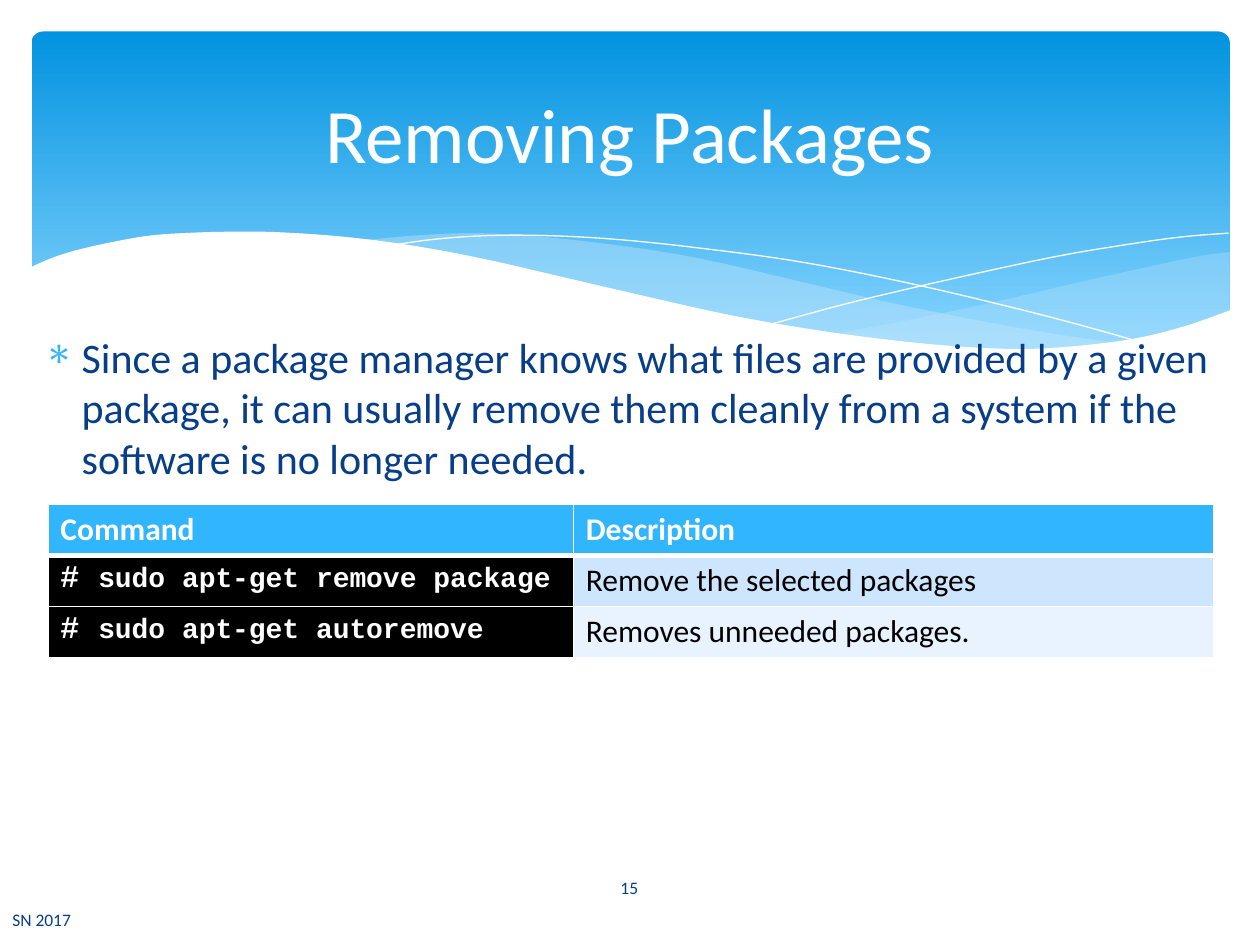
from lxml import etree
from pptx import Presentation
from pptx.dml.color import RGBColor
from pptx.enum.shapes import MSO_SHAPE
from pptx.enum.text import MSO_ANCHOR, PP_ALIGN
from pptx.oxml.ns import qn
from pptx.util import Inches, Pt

ROUNDED = MSO_SHAPE.ROUNDED_RECTANGLE
TOP, MIDDLE = MSO_ANCHOR.TOP, MSO_ANCHOR.MIDDLE
LEFT, CENTER = PP_ALIGN.LEFT, PP_ALIGN.CENTER

WHITE, BLACK, NAVY, SKY, MIST = "FFFFFF", "000000", "073E87", "31B6FD", "C6E7FC"
SANS, MONO = "Calibri", "Courier New"

RIGHT_SWELL = (
    [(9.51, 1.75), (9.23, 1.79), (8.81, 1.88), (8.36, 1.98), (7.54, 2.17), (6.81, 2.32), (6.36, 2.4)],
    [(6.36, 2.4), (6.94, 2.47), (7.56, 2.52), (8.1, 2.52), (8.56, 2.48), (8.96, 2.4), (9.24, 2.32), (9.51, 2.22)],
)
MIDDLE_SWELL = (
    [(8.68, 2.48), (8.12, 2.4), (7.5, 2.29), (6.81, 2.15), (6.04, 1.97), (5.44, 1.83), (4.89, 1.73),
     (4.17, 1.64), (3.55, 1.6), (3.03, 1.62), (2.61, 1.66)],
    [(2.61, 1.66), (3.17, 1.74), (3.79, 1.86), (4.24, 1.97), (5.05, 2.15), (5.76, 2.3), (6.4, 2.41),
     (6.97, 2.49), (7.48, 2.52), (7.93, 2.53), (8.32, 2.52), (8.68, 2.48)],
)
FALLING_LINE = [(2.84, 1.7), (3.19, 1.65), (3.62, 1.62), (4.08, 1.62), (4.64, 1.65), (5.31, 1.72),
                (6.11, 1.83), (7.02, 2.01), (8.06, 2.26), (8.82, 2.47)]
RISING_LINE = [(5.88, 2.32), (6.47, 2.16), (7.23, 1.98), (8.11, 1.79), (8.7, 1.69), (9.13, 1.63), (9.5, 1.6)]
WHITE_WAVE = [(9.52, 2.21), (9.15, 2.34), (8.74, 2.44), (8.25, 2.5), (7.84, 2.52), (7.36, 2.5), (6.83, 2.45),
              (6.23, 2.37), (5.54, 2.25), (4.78, 2.08), (4.22, 1.95), (3.66, 1.82), (3.15, 1.72), (2.67, 1.65),
              (2.25, 1.61), (1.86, 1.59), (1.52, 1.59), (1.21, 1.6), (0.94, 1.62), (0.7, 1.66), (0.42, 1.72),
              (0.21, 1.78), (0.04, 1.85), (-0.02, 1.88)]


def color(hex_text):
    """Return the colour for a hex string."""
    return RGBColor.from_string(hex_text)


def smooth_curve(points, steps=5):
    """Return points along a Catmull-Rom curve through the given points."""
    padded = [points[0], *points, points[-1]]
    curve = []
    for a, b, c, d in zip(padded, padded[1:], padded[2:], padded[3:]):
        for step in range(steps):
            t = step / steps
            curve.append(tuple(
                (2 * q + (r - p) * t + (2 * p - 5 * q + 4 * r - s) * t ** 2
                 + (3 * q - p - 3 * r + s) * t ** 3) / 2
                for p, q, r, s in zip(a, b, c, d)))
    return curve + [points[-1]]


def add_outline(page, box, points, fill=None, opacity=100, line=None):
    """Draw a freeform from points relative to the box."""
    emu = [(Inches(x), Inches(y)) for x, y in points]
    builder = page.shapes.build_freeform(*emu[0], scale=1.0)
    builder.add_line_segments(emu[1:], close=fill is not None)
    shape = builder.convert_to_shape(Inches(box[0]), Inches(box[1]))
    shape.shadow.inherit = False
    if fill:
        shape.fill.solid()
        shape.fill.fore_color.rgb = color(fill)
        tint = shape.fill._xPr.find(".//" + qn("a:srgbClr"))
        etree.SubElement(tint, qn("a:alpha"), val=str(opacity * 1000))
    else:
        shape.fill.background()
    if line:
        shape.line.color.rgb = color(line)
        shape.line.width = Pt(0)
    else:
        shape.line.fill.background()


def add_span(para, text, size=18, font=SANS, ink=NAVY, bold=False):
    """Append formatted text to a paragraph."""
    span = para.add_run()
    span.text = text
    span.font.size = Pt(size)
    span.font.name = font
    span.font.bold = bold
    span.font.color.rgb = color(ink)


def add_text(page, box, text, align=LEFT, anchor=MIDDLE, **style):
    """Place a one-paragraph text box and return its paragraph."""
    frame = page.shapes.add_textbox(*map(Inches, box)).text_frame
    frame.word_wrap = True
    frame.vertical_anchor = anchor
    para = frame.paragraphs[0]
    para.alignment = align
    add_span(para, text, **style)
    return para


def add_banner(page, box, title):
    """Draw the gradient banner with its waves and title."""
    left, top, width, height = box
    panel = page.shapes.add_shape(ROUNDED, *map(Inches, box))
    panel.adjustments[0] = 0.034
    panel.shadow.inherit = False
    panel.line.fill.background()
    panel.fill.gradient()
    panel.fill.gradient_angle = 270
    for stop, position, shade in zip(panel.fill.gradient_stops, (0, 0.9), ("0293E0", "83D3FE")):
        stop.position = position
        stop.color.rgb = color(shade)
    for edges, opacity in ((RIGHT_SWELL, 29), (MIDDLE_SWELL, 40)):
        upper, lower = map(smooth_curve, edges)
        add_outline(page, box, upper + lower[1:], fill=MIST, opacity=opacity)
    for points in (FALLING_LINE, RISING_LINE):
        add_outline(page, box, smooth_curve(points), line=WHITE)
    floor = [(-0.02, height + 0.34), (width + 0.01, height + 0.34)]
    add_outline(page, box, smooth_curve(WHITE_WAVE) + floor, fill=WHITE)
    add_text(page, (left + 0.25, top + 0.12, width - 0.51, 1.37), title, align=CENTER, size=44, ink=WHITE)


def add_bullet(page, box, text):
    """Place a bulleted paragraph with a hanging indent."""
    para = add_text(page, box, text, anchor=TOP, size=24)
    props = para._p.get_or_add_pPr()
    props.set("marL", str(Inches(0.3)))
    props.set("indent", str(-Inches(0.3)))
    before = etree.SubElement(props, qn("a:spcBef"))
    etree.SubElement(before, qn("a:spcPct"), val="20000")
    tint = etree.SubElement(props, qn("a:buClr"))
    etree.SubElement(tint, qn("a:srgbClr"), val=SKY)
    etree.SubElement(props, qn("a:buChar"), char="∗")


def style_cell(cell, fill, bottom=1):
    """Set the fill and the white borders of a cell."""
    props = cell._tc.get_or_add_tcPr()
    for side, width in (("L", 1), ("R", 1), ("T", 1), ("B", bottom)):
        border = etree.SubElement(props, qn("a:ln" + side), w=str(Pt(width)))
        paint = etree.SubElement(border, qn("a:solidFill"))
        etree.SubElement(paint, qn("a:srgbClr"), val=WHITE)
    cell.fill.solid()
    cell.fill.fore_color.rgb = color(fill)


def add_command_table(page, box, headings, commands):
    """Build the table of commands and their descriptions."""
    table = page.shapes.add_table(len(commands) + 1, 2, *map(Inches, box)).table
    for column, width in zip(table.columns, (4.17, box[2] - 4.17)):
        column.width = Inches(width)
    for index, heading in enumerate(headings):
        cell = table.cell(0, index)
        style_cell(cell, SKY, bottom=3)
        add_span(cell.text_frame.paragraphs[0], heading, ink=WHITE, bold=True)
    for row, (command, description) in enumerate(commands, 1):
        prompt, detail = table.cell(row, 0), table.cell(row, 1)
        style_cell(prompt, BLACK)
        style_cell(detail, "CEE5FE" if row % 2 else "E8F3FF")
        for text, size in (("# ", 18), (command, 16)):
            add_span(prompt.text_frame.paragraphs[0], text, size=size, font=MONO, ink=WHITE, bold=True)
        add_span(detail.text_frame.paragraphs[0], description, ink=BLACK)


def main():
    """Build and save the slide."""
    deck = Presentation()
    deck.slide_width, deck.slide_height = Inches(10), Inches(7.5)
    page = deck.slides.add_slide(deck.slide_layouts[6])
    add_banner(page, (0.25, 0.25, 9.51, 2.7), "Removing Packages")
    add_command_table(page, (0.38, 4, 9.25, 1.22), ("Command", "Description"), (
        ("sudo apt-get remove package", "Remove the selected packages"),
        ("sudo apt-get autoremove", "Removes unneeded packages."),
    ))
    add_text(page, (4.36, 6.84, 1.27, 0.4), "15", align=CENTER, size=10)
    add_bullet(page, (0.25, 2.58, 9.5, 4.26),
               "Since a package manager knows what files are provided by a given package, it can usually "
               "remove them cleanly from a system if the software is no longer needed.")
    add_text(page, (0, 7.1, 4.14, 0.4), "SN 2017", size=10)
    deck.save("out.pptx")


if __name__ == "__main__":
    main()
